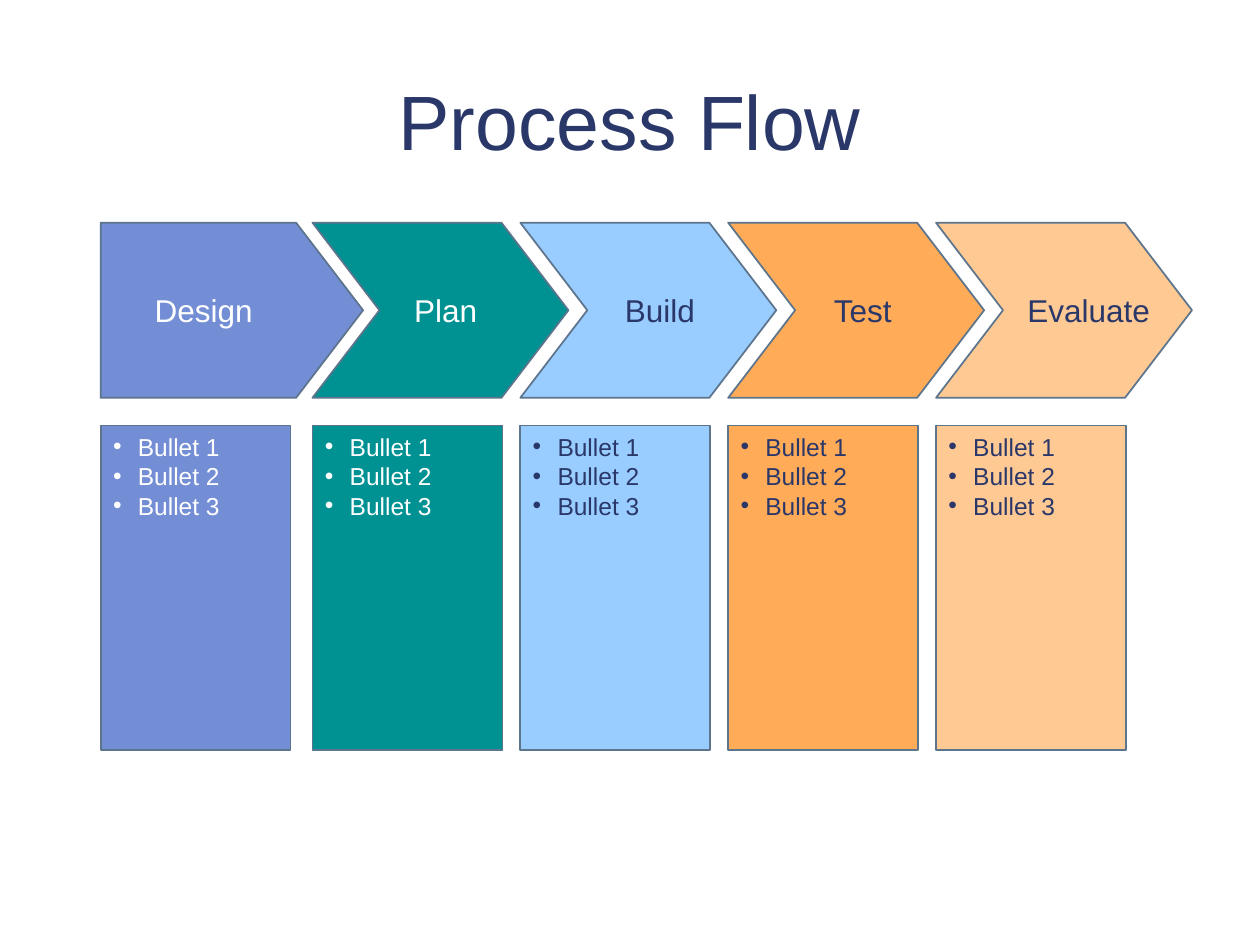
from lxml import etree
from pptx import Presentation
from pptx.dml.color import RGBColor
from pptx.enum.shapes import MSO_SHAPE
from pptx.enum.text import MSO_ANCHOR, MSO_AUTO_SIZE, PP_ALIGN
from pptx.oxml.ns import qn
from pptx.util import Cm, Pt

RECT = MSO_SHAPE.RECTANGLE
TOP, MIDDLE = MSO_ANCHOR.TOP, MSO_ANCHOR.MIDDLE
LEFT, CENTER = PP_ALIGN.LEFT, PP_ALIGN.CENTER
FIT = MSO_AUTO_SIZE.SHAPE_TO_FIT_TEXT

NAVY, WHITE, EDGE = "2A3769", "FFFFFF", "5C748C"
# name, fill, text colour, label left, label width
STEPS = [
    ("Design", "748ED6", WHITE, 2.87, 2.55),
    ("Plan", "009193", WHITE, 8.1, 1.85),
    ("Build", "99CCFF", NAVY, 12.35, 2),
    ("Test", "FFAB57", NAVY, 16.56, 1.8),
    ("Evaluate", "FFC993", NAVY, 20.46, 3.1),
]
BULLETS = ["Bullet 1", "Bullet 2", "Bullet 3"]


def color(code):
    return RGBColor.from_string(code)


class Deck:
    """Holds the style and the current slide."""

    font = "Arial"
    indent = Cm(0.5)

    def __init__(self, slide):
        self.slide = slide

    def style(self, para, size, tint, align=LEFT):
        para.alignment = align
        para.font.name = self.font
        para.font.size = Pt(size)
        para.font.color.rgb = color(tint)

    def paint(self, shape, fill):
        shape.shadow.inherit = False
        shape.fill.solid()
        shape.fill.fore_color.rgb = color(fill)
        shape.line.color.rgb = color(EDGE)
        shape.line.width = Pt(1)

    def text(self, words, x, y, w, h, size, tint, align=LEFT, anchor=TOP):
        box = self.slide.shapes.add_textbox(Cm(x), Cm(y), Cm(w), Cm(h))
        frame = box.text_frame
        frame.vertical_anchor = anchor
        frame.text = words
        self.style(frame.paragraphs[0], size, tint, align)
        return frame

    def label(self, words, x, y, w, h, tint):
        frame = self.text(words, x, y, w, h, 18, tint)
        frame.word_wrap = False
        frame.auto_size = FIT

    def arrow(self, x, y, body, tip, h, notch, fill):
        """Draw a block arrow whose left side is cut in by notch."""
        points = [(x + body, y), (x + body + tip, y + h / 2),
                  (x + body, y + h), (x, y + h)]
        if notch:
            points.append((x + notch, y + h / 2))
        pen = self.slide.shapes.build_freeform(Cm(x), Cm(y))
        pen.add_line_segments([(Cm(a), Cm(b)) for a, b in points])
        self.paint(pen.convert_to_shape(), fill)

    def panel(self, items, x, y, w, h, fill, tint):
        box = self.slide.shapes.add_shape(RECT, Cm(x), Cm(y), Cm(w), Cm(h))
        self.paint(box, fill)
        frame = box.text_frame
        frame.word_wrap = True
        frame.vertical_anchor = TOP
        frame.text = "\n".join(items)
        for para in frame.paragraphs:
            props = para._p.get_or_add_pPr()
            props.set("marL", str(self.indent))
            props.set("indent", str(-self.indent))
            etree.SubElement(props, qn("a:buFont")).set("typeface", self.font)
            etree.SubElement(props, qn("a:buChar")).set("char", "•")
            self.style(para, 14, tint)


def main():
    show = Presentation()
    show.slide_width, show.slide_height = Cm(25.4), Cm(19.05)
    deck = Deck(show.slides.add_slide(show.slide_layouts[6]))

    title = deck.text("Process Flow", 1.27, 0.82, 22.86, 3.18, 44, NAVY,
                      CENTER, MIDDLE)
    title.word_wrap = True

    tip = 1.35
    for i, (name, fill, tint, left, width) in enumerate(STEPS):
        # The first step has a flat back, so it stands slightly apart.
        x = 6.3 + 4.19 * (i - 1) if i else 2.03
        body, notch = (3.81, tip) if i else (3.94, 0)
        deck.panel(BULLETS, x, 8.58, 3.83, 6.54, fill, tint)
        deck.arrow(x, 4.49, body, tip, 3.53, notch, fill)
        deck.label(name, left, 5.74, width, 1.02, tint)

    show.save("out.pptx")


if __name__ == "__main__":
    main()
